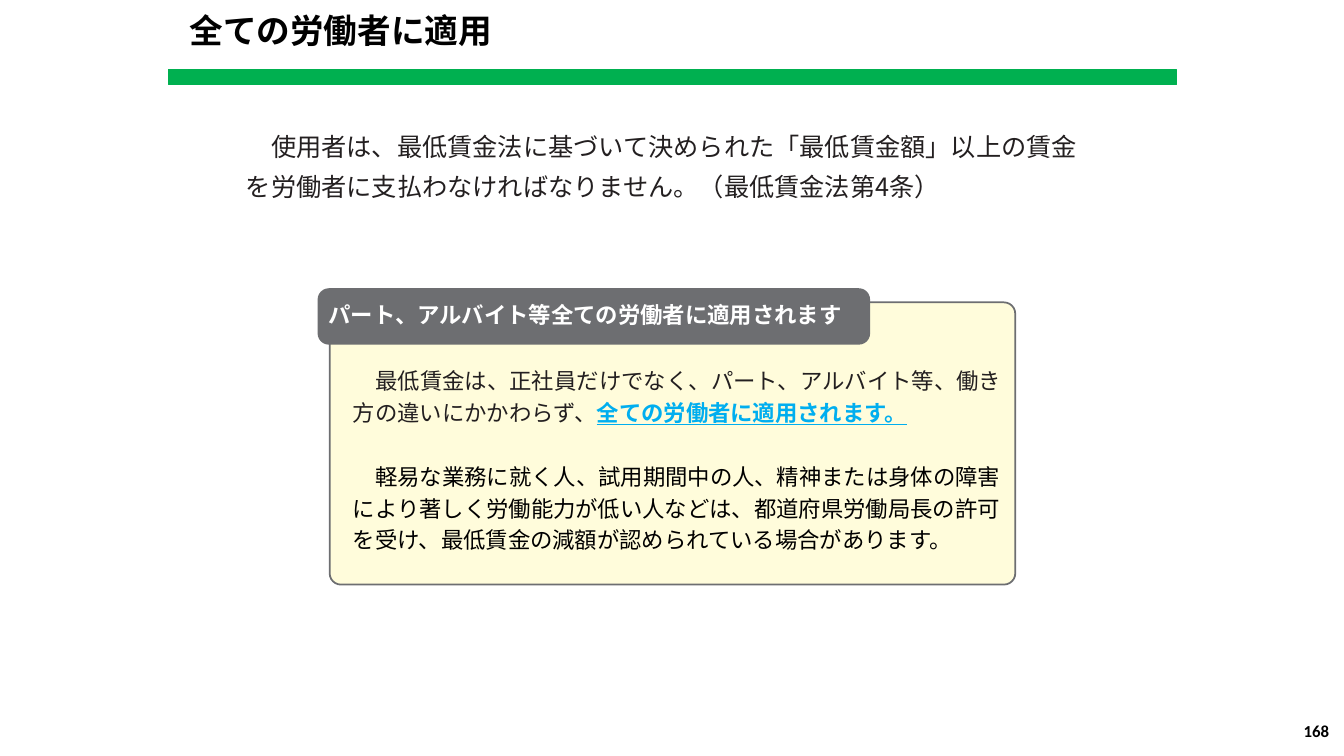
from lxml.etree import SubElement
from pptx import Presentation
from pptx.dml.color import RGBColor
from pptx.enum.shapes import MSO_SHAPE as Shape
from pptx.enum.text import MSO_ANCHOR as Anchor, PP_ALIGN as Align
from pptx.oxml.ns import qn
from pptx.util import Inches, Pt

FONT = "Noto Sans CJK JP"
BLACK = RGBColor(0x00, 0x00, 0x00)
WHITE = RGBColor(0xFF, 0xFF, 0xFF)
INK = RGBColor(0x23, 0x1F, 0x20)
GREEN = RGBColor(0x00, 0xB0, 0x50)
GRAY = RGBColor(0x6D, 0x6E, 0x71)
CREAM = RGBColor(0xFF, 0xFC, 0xDB)
BLUE = RGBColor(0x00, 0xAE, 0xEF)


def style(para, size, color, bold=False, name=FONT):
    """Set the font of a paragraph for Latin and Japanese text."""
    font = para.font
    font.name, font.size, font.bold = name, Pt(size), bold
    font.color.rgb = color
    props = para._p.get_or_add_pPr().find(qn("a:defRPr"))
    SubElement(props, qn("a:ea")).set("typeface", name)
    for run in para.runs:
        run.font.name, run.font.size, run.font.bold = name, Pt(size), bold
        run.font.color.rgb = color
        SubElement(run.font._element, qn("a:ea")).set("typeface", name)


def add_text(slide, x, y, w, h, text, inset=0):
    """Add a wrapped text box and return its frame."""
    frame = slide.shapes.add_textbox(*map(Inches, (x, y, w, h))).text_frame
    frame.word_wrap = True
    frame.margin_left = Inches(inset)
    frame.margin_top = Inches(0.01)
    frame.margin_right = frame.margin_bottom = 0
    frame.text = text
    return frame


def add_block(slide, kind, x, y, w, h, fill, line, width=1):
    """Add a flat filled shape."""
    block = slide.shapes.add_shape(kind, *map(Inches, (x, y, w, h)))
    block.shadow.inherit = False
    block.fill.solid()
    block.fill.fore_color.rgb = fill
    block.line.color.rgb = line
    block.line.width = Pt(width)
    return block


def add_head(slide, x, y, w):
    """Place the title over its green bar."""
    title = slide.shapes.title
    title.left, title.top = Inches(x + 0.11), Inches(y)
    title.width, title.height = Inches(3.23), Inches(0.47)
    frame = title.text_frame
    frame.text = "全ての労働者に適用"
    frame.word_wrap = False
    frame.vertical_anchor = Anchor.TOP
    para = frame.paragraphs[0]
    para.alignment = Align.LEFT
    para.line_spacing = Pt(25.5)
    style(para, 24, BLACK, True)
    add_block(slide, Shape.RECTANGLE, x, y + 0.6, w, 0.15, GREEN, GREEN)


def add_lead(slide, x, y, w, h):
    """Place the opening statement of the rule."""
    text = ("\u3000使用者は、最低賃金法に基づいて決められた「最低賃金額」以上の賃金"
            "を労働者に支払わなければなりません。（最低賃金法第4条）")
    para = add_text(slide, x, y, w, h, text, 0.1).paragraphs[0]
    para.line_spacing = 1.33
    style(para, 18, INK)


def add_panel(slide, x, y, w, h):
    """Place the cream panel with its heading tab and body."""
    panel = add_block(slide, Shape.ROUNDED_RECTANGLE, x, y, w, h, CREAM, GRAY, 1.25)
    panel.adjustments[0] = 0.04
    tab = add_block(slide, Shape.ROUNDED_RECTANGLE, x - 0.12, y - 0.14, 5.48, 0.56, GRAY, GRAY)
    tab.adjustments[0] = 0.2
    tab.line.fill.background()
    head = add_text(slide, x - 0.02, y - 0.02, 5.21, 0.28,
                    "パート、アルバイト等全ての労働者に適用されます", 0.01)
    style(head.paragraphs[0], 16, WHITE, True)

    body = add_text(slide, x + 0.22, y + 0.59, w - 0.35, 1.89,
                    "\u3000最低賃金は、正社員だけでなく、パート、アルバイト等、"
                    "働き方の違いにかかわらず、", 0.01)
    scope = body.paragraphs[0]
    scope.alignment = Align.JUSTIFY
    key = scope.add_run()
    key.text = "全ての労働者に適用されます。"
    style(scope, 16, INK)
    key.font.bold = key.font.underline = True
    key.font.color.rgb = BLUE

    limit = body.add_paragraph()
    limit.text = ("\u3000軽易な業務に就く人、試用期間中の人、精神または身体の障害により"
                  "著しく労働能力が低い人などは、都道府県労働局長の許可を受け、"
                  "最低賃金の減額が認められている場合があります。")
    limit.space_before = Pt(23.5)
    style(limit, 16, BLACK)
    for para in body.paragraphs:
        para.line_spacing = 1.17


def add_page(slide, x, y, w, h):
    """Place the page number."""
    frame = add_text(slide, x, y, w, h, "168")
    frame.margin_top, frame.margin_right = Inches(0.05), Inches(0.1)
    para = frame.paragraphs[0]
    para.alignment = Align.RIGHT
    style(para, 12, BLACK, True, "Calibri")


def main():
    """Build and save the slide."""
    deck = Presentation()
    deck.slide_width, deck.slide_height = Inches(13.33), Inches(7.5)
    slide = deck.slides.add_slide(deck.slide_layouts[5])
    add_head(slide, 1.67, 0.09, 10)
    add_lead(slide, 2.34, 1.19, 8.58, 0.76)
    add_panel(slide, 3.27, 3, 6.8, 2.8)
    add_page(slide, 10.17, 7.1, 3.11, 0.4)
    deck.save("out.pptx")


if __name__ == "__main__":
    main()
